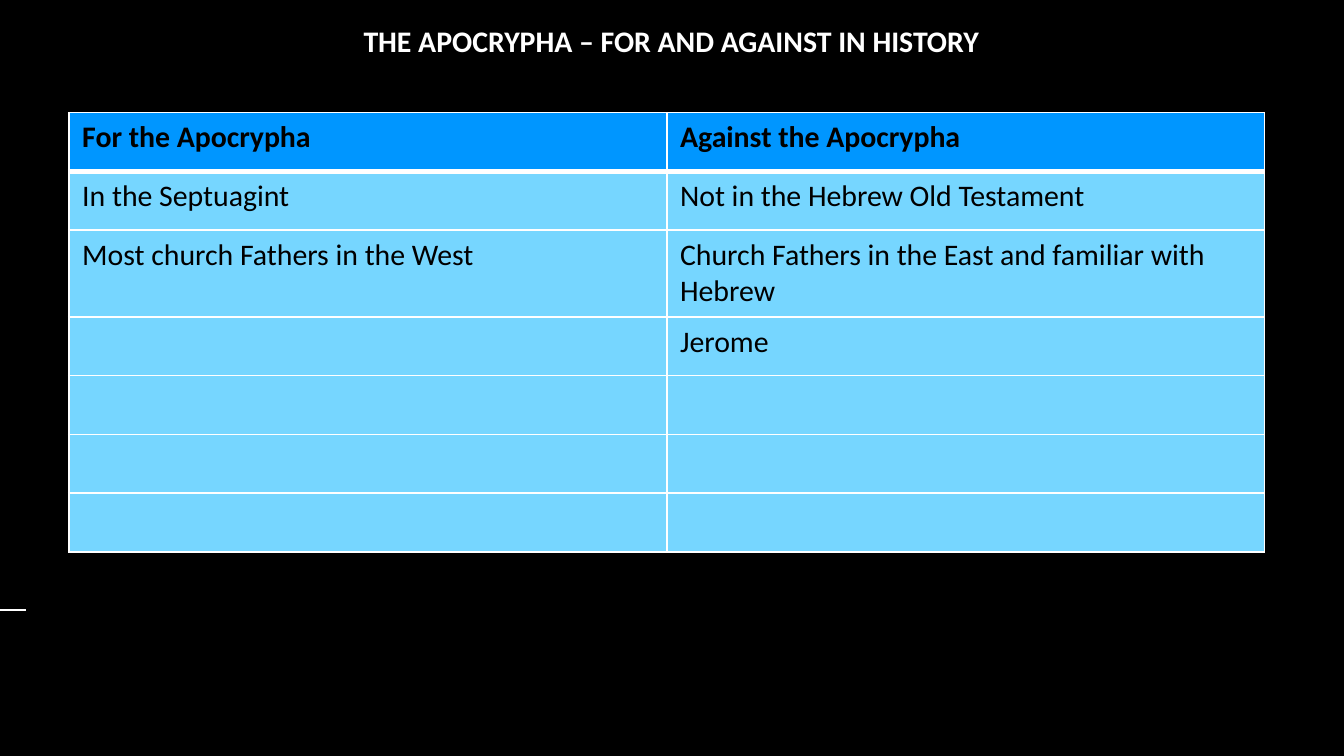
from collections import namedtuple
from dataclasses import dataclass

import pptx
import pptx.dml.color
import pptx.enum.shapes
import pptx.enum.text
import pptx.oxml
import pptx.oxml.ns
import pptx.util
from lxml import etree
from pptx.util import Cm

Box = namedtuple("Box", "left top width height")


@dataclass(frozen=True)
class Theme:
    font: str = "Calibri"
    size: int = 16
    background: str = "000000"
    light: str = "FFFFFF"
    dark: str = "000000"
    header: str = "0096FF"
    body: str = "76D6FF"
    thin: float = 1
    thick: float = 3
    rule: float = 0.75


THEME = Theme()

ROWS = [
    ("For the Apocrypha", "Against the Apocrypha"),
    ("In the Septuagint", "Not in the Hebrew Old Testament"),
    ("Most church Fathers in the West",
     "Church Fathers in the East and familiar with Hebrew"),
    ("", "Jerome"),
    ("", ""),
    ("", ""),
    ("", ""),
]
TWO_LINE_ROW = 2
TWO_LINE_HEIGHT = 1.64


def rgb(value):
    return pptx.dml.color.RGBColor.from_string(value)


def add_span(para, text, color, bold):
    para.font.size = pptx.util.Pt(THEME.size)
    if not text:
        return
    span = para.add_run()
    span.text = text
    span.font.name = THEME.font
    span.font.size = pptx.util.Pt(THEME.size)
    span.font.bold = bold
    span.font.color.rgb = rgb(color)


def add_title(page, box, text):
    frame = page.shapes.add_textbox(*map(Cm, box)).text_frame
    frame.word_wrap = True
    frame.vertical_anchor = pptx.enum.text.MSO_ANCHOR.TOP
    para = frame.paragraphs[0]
    para.alignment = pptx.enum.text.PP_ALIGN.CENTER
    add_span(para, text, THEME.light, True)


def set_borders(cell, bottom):
    """Draw all four edges of a cell; the bottom one has its own width."""
    properties = cell._tc.get_or_add_tcPr()
    widths = {"lnL": THEME.thin, "lnR": THEME.thin, "lnT": THEME.thin, "lnB": bottom}
    for position, (edge, width) in enumerate(widths.items()):
        line = pptx.oxml.parse_xml(
            f'<a:{edge} {pptx.oxml.ns.nsdecls("a")} w="{pptx.util.Pt(width)}">'
            f'<a:solidFill><a:srgbClr val="{THEME.light}"/></a:solidFill></a:{edge}>')
        properties.insert(position, line)


def add_comparison(page, box, rows):
    columns = len(rows[0])
    table = page.shapes.add_table(len(rows), columns, *map(Cm, box)).table
    for column in table.columns:
        column.width = Cm(box.width / columns)
    row_height = (box.height - TWO_LINE_HEIGHT) / (len(rows) - 1)
    for index, texts in enumerate(rows):
        is_header = index == 0
        table.rows[index].height = Cm(
            TWO_LINE_HEIGHT if index == TWO_LINE_ROW else row_height)
        for cell, text in zip(table.rows[index].cells, texts):
            cell.fill.solid()
            cell.fill.fore_color.rgb = rgb(THEME.header if is_header else THEME.body)
            # The heavy rule belongs to both the header and the row below it.
            set_borders(cell, THEME.thick if is_header else THEME.thin)
            if index == 1:
                top = cell._tc.tcPr.find(pptx.oxml.ns.qn("a:lnT"))
                top.set("w", str(pptx.util.Pt(THEME.thick)))
            add_span(cell.text_frame.paragraphs[0], text, THEME.dark, is_header)


def add_margin_rule(page, box):
    rule = page.shapes.add_connector(
        pptx.enum.shapes.MSO_CONNECTOR.STRAIGHT,
        Cm(box.left), Cm(box.top), Cm(box.left + box.width), Cm(box.top + box.height))
    rule.line.color.rgb = rgb(THEME.light)
    rule.line.width = pptx.util.Pt(THEME.rule)
    etree.SubElement(rule._element.spPr, pptx.oxml.ns.qn("a:effectLst"))


def main():
    deck = pptx.Presentation()
    deck.slide_width, deck.slide_height = Cm(25.4), Cm(14.29)
    page = deck.slides.add_slide(deck.slide_layouts[6])
    page.background.fill.solid()
    page.background.fill.fore_color.rgb = rgb(THEME.background)

    add_margin_rule(page, Box(0, 11.53, 0.5, 0))
    add_title(page, Box(6.38, 0.3, 12.62, 0.86),
              "THE APOCRYPHA – FOR AND AGAINST IN HISTORY")
    add_comparison(page, Box(1.3, 2.13, 22.6, 8.3), ROWS)
    deck.save("out.pptx")


if __name__ == "__main__":
    main()
